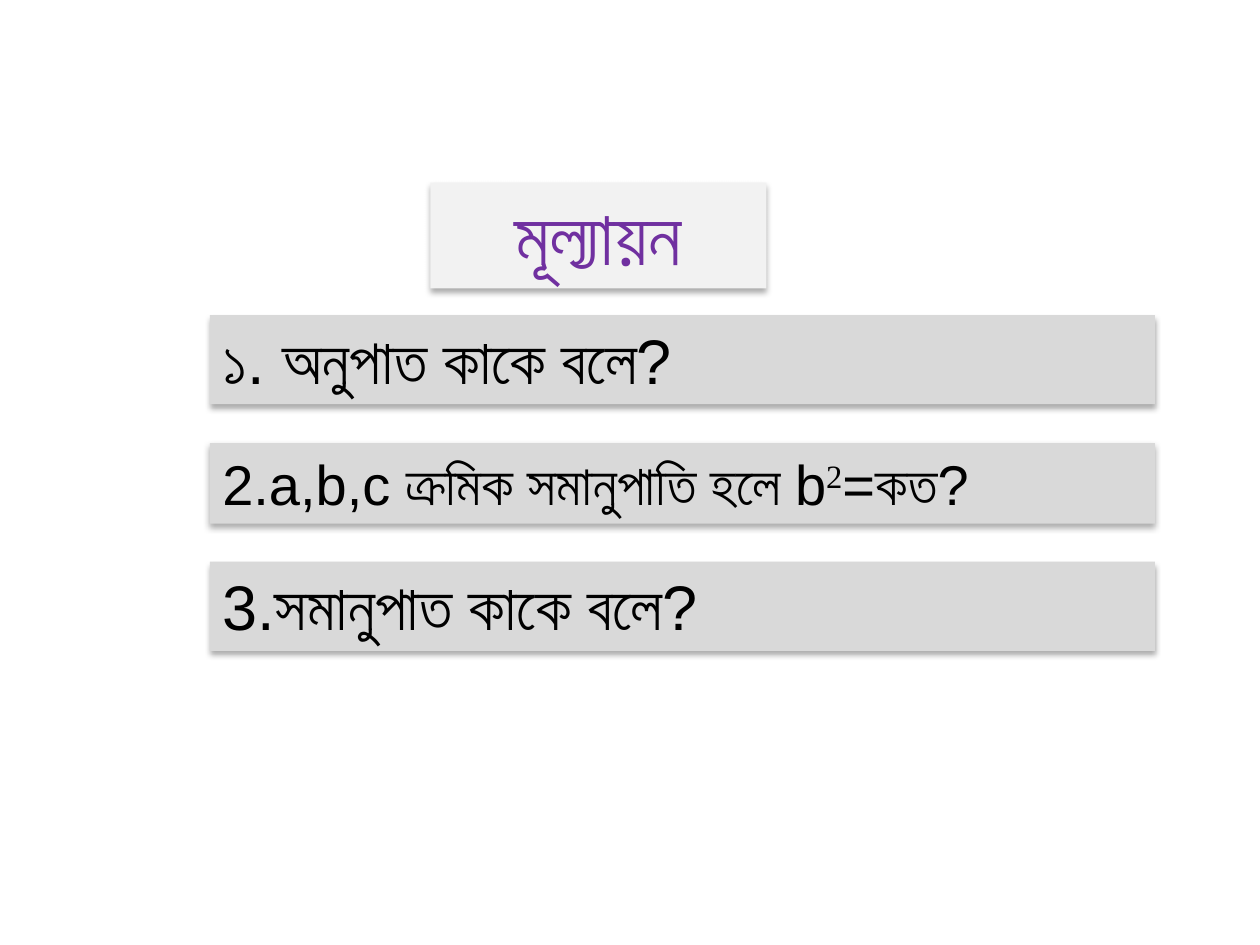
from lxml.etree import SubElement
from pptx import Presentation
from pptx.dml.color import RGBColor
from pptx.enum.shapes import MSO_SHAPE
from pptx.enum.text import MSO_ANCHOR, MSO_AUTO_SIZE, PP_ALIGN
from pptx.oxml.ns import qn
from pptx.util import Pt

LIGHT_GRAY = RGBColor(0xF2, 0xF2, 0xF2)
GRAY = RGBColor(0xD9, 0xD9, 0xD9)
PURPLE = RGBColor(0x70, 0x30, 0xA0)
BLACK = RGBColor(0, 0, 0)


def add_shadow(shape):
    """Give the shape a soft shadow that falls straight down."""
    shape.shadow.inherit = False
    effects = shape._element.spPr.find(qn("a:effectLst"))
    shadow = SubElement(effects, qn("a:outerShdw"), blurRad=str(Pt(3.5)),
                        dist=str(Pt(2.2)), dir="5400000", rotWithShape="0")
    color = SubElement(shadow, qn("a:srgbClr"), val=str(BLACK))
    SubElement(color, qn("a:alpha"), val="32000")


def add_panel(slide, box, fill):
    """Add a shadowed rectangle and return its first paragraph."""
    shape = slide.shapes.add_shape(MSO_SHAPE.RECTANGLE, *map(Pt, box))
    shape.fill.solid()
    shape.fill.fore_color.rgb = fill
    shape.line.fill.background()
    add_shadow(shape)
    frame = shape.text_frame
    frame.word_wrap = True
    frame.auto_size = MSO_AUTO_SIZE.SHAPE_TO_FIT_TEXT
    frame.vertical_anchor = MSO_ANCHOR.TOP
    return frame.paragraphs[0]


def add_text(paragraph, text, size, color=BLACK, font="Arial", bold=None, raised=False):
    """Add a formatted run to the paragraph."""
    run = paragraph.add_run()
    run.text = text
    run.font.size = Pt(size)
    run.font.name = font
    run.font.bold = bold
    run.font.color.rgb = color
    if raised:
        run._r.get_or_add_rPr().set("baseline", "30000")


def add_title(slide, box):
    """Place the centred heading in the box."""
    paragraph = add_panel(slide, box, LIGHT_GRAY)
    paragraph.alignment = PP_ALIGN.CENTER
    add_text(paragraph, "মূল্যায়ন", size=44, color=PURPLE, bold=True)


def add_question(slide, box, parts, size, hanging=0, space_before=0):
    """Place one question in the box, with every second part raised."""
    paragraph = add_panel(slide, box, GRAY)
    paragraph.alignment = PP_ALIGN.LEFT
    paragraph.space_before = Pt(space_before)
    if hanging:
        properties = paragraph._p.get_or_add_pPr()
        properties.set("marL", str(Pt(hanging)))
        properties.set("indent", str(-Pt(hanging)))
    for index, text in enumerate(parts):
        raised = index % 2 == 1
        font = "Times New Roman" if raised else "Arial"
        add_text(paragraph, text, size=size, font=font, raised=raised)


def add_questions(slide, left, top, width):
    """Stack the three questions below the given top edge."""
    add_question(slide, (left, top, width, 51), ["১. অনুপাত কাকে বলে?"], size=36)
    add_question(slide, (left, top + 73.2, width, 46),
                 ["2.a,b,c ক্রমিক সমানুপাতি হলে b", "2", "=কত?"],
                 size=32, hanging=21, space_before=2.5)
    add_question(slide, (left, top + 141, width, 51), ["3.সমানুপাত কাকে বলে?"], size=36)


def main():
    """Build and save the assessment slide."""
    presentation = Presentation()
    presentation.slide_width = Pt(720)
    presentation.slide_height = Pt(540)
    slide = presentation.slides.add_slide(presentation.slide_layouts[6])
    add_title(slide, (246, 104.4, 192, 60.5))
    add_questions(slide, left=120, top=180, width=540)
    presentation.save("out.pptx")


if __name__ == "__main__":
    main()
